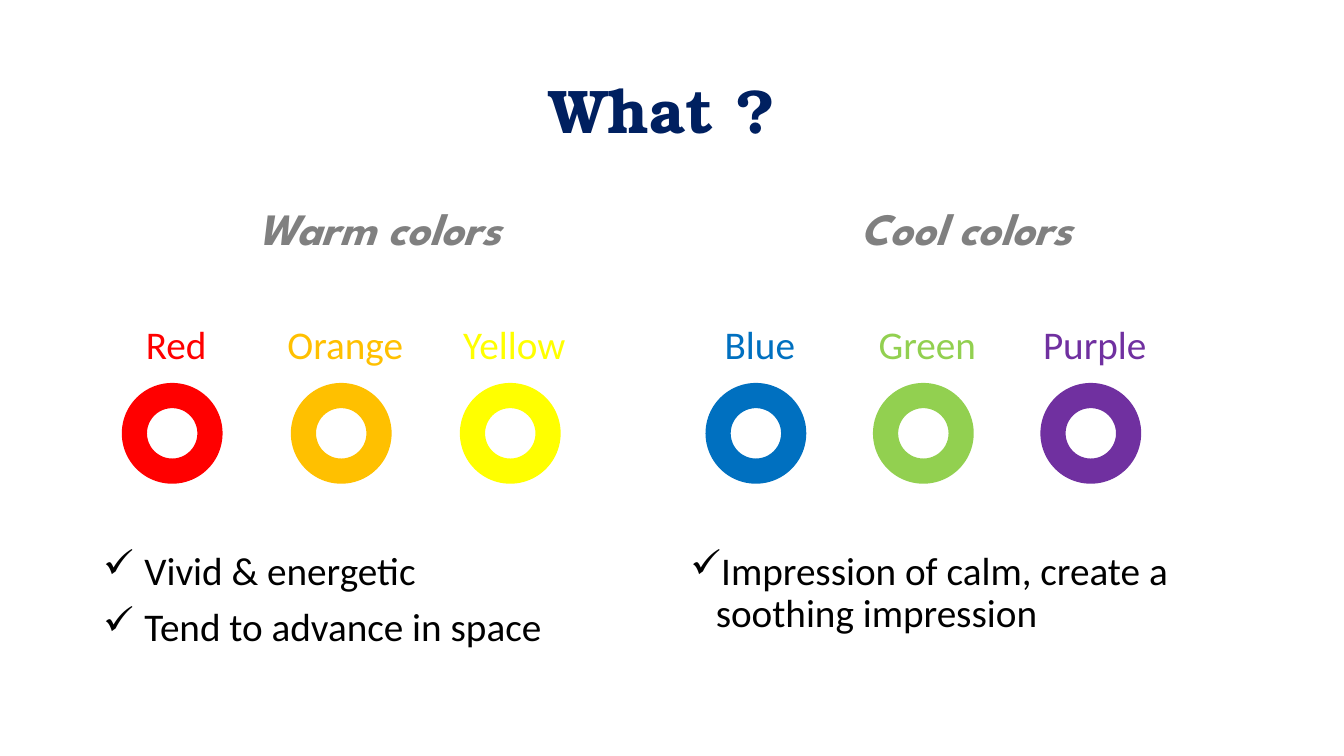
from pptx import Presentation
from pptx.dml.color import RGBColor
from pptx.enum import shapes, text
from pptx.oxml import parse_xml
from pptx.oxml.ns import nsdecls
from pptx.util import Cm, Pt

# Content
TITLE = "What ?"
GROUPS = [
    dict(head="Warm colors", left=2.6, first=4.34, step=4.26, hang=1.04,
         rings=["Red", "Orange", "Yellow"],
         points=["Vivid & energetic", "Tend to advance in space"]),
    dict(head="Cool colors", left=17.4, first=19.05, step=4.22, hang=0.64,
         rings=["Blue", "Green", "Purple"],
         points=["Impression of calm, create a soothing impression"]),
]
COLORS = {
    "Title": "002060", "Head": "808080", "Text": "000000",
    "Red": "FF0000", "Orange": "FFC000", "Yellow": "FFFF00",
    "Blue": "0070C0", "Green": "92D050", "Purple": "7030A0",
}

# Layout in centimetres
WIDTH, RING, LABEL = 13.9, 2.54, 4.2
HEAD_TOP, LABEL_TOP, RING_TOP, POINT_TOP = 5.21, 8.2, 9.65, 13.9

deck = Presentation()
deck.slide_width, deck.slide_height = Cm(33.87), Cm(19.05)
slide = deck.slides.add_slide(deck.slide_layouts[6])


def color(name):
    return RGBColor.from_string(COLORS[name])


def write(lines, left, top, width, height, tint, size=28, face="Calibri",
          bold=False, italic=False, hang=None):
    """Add a text box; a hang in cm gives check-mark bullets."""
    box = slide.shapes.add_textbox(Cm(left), Cm(top), Cm(width), Cm(height))
    frame = box.text_frame
    frame.word_wrap = True
    frame.margin_left = frame.margin_right = 0
    frame.margin_top = frame.margin_bottom = 0
    frame.text = "\n".join(lines)
    for i, para in enumerate(frame.paragraphs):
        para.line_spacing = 0.9
        para.space_before = Pt(10 if i else 0)
        para.alignment = text.PP_ALIGN.LEFT if hang else text.PP_ALIGN.CENTER
        if hang:
            props = para._p.get_or_add_pPr()
            props.set("marL", str(Cm(hang)))
            props.set("indent", str(-Cm(hang)))
            props.append(parse_xml(f'<a:buChar {nsdecls("a")} char="✓"/>'))
        for run in para.runs:
            font = run.font
            font.name, font.size = face, Pt(size)
            font.bold, font.italic = bold, italic
            font.color.rgb = color(tint)
    return frame


# Title
title = write([TITLE], 2.1, 1.02, 29.2, 3.68, "Title", 44,
              "TeX Gyre Bonum", bold=True)
title.vertical_anchor = text.MSO_ANCHOR.MIDDLE

for group in GROUPS:
    left = group["left"]
    # Heading
    write([group["head"]], left, HEAD_TOP, WIDTH, 1.3, "Head", 32,
          "League Spartan", bold=True, italic=True)
    # Labelled rings
    for i, name in enumerate(group["rings"]):
        mid = group["first"] + i * group["step"]
        write([name], mid + 0.1 - LABEL / 2, LABEL_TOP, LABEL, 1.2, name)
        ring = slide.shapes.add_shape(
            shapes.MSO_SHAPE.DONUT, Cm(mid - RING / 2), Cm(RING_TOP),
            Cm(RING), Cm(RING))
        ring.shadow.inherit = False
        ring.fill.solid()
        ring.fill.fore_color.rgb = color(name)
        ring.line.fill.background()
    # Points
    write(group["points"], left, POINT_TOP, WIDTH, 3, "Text",
          hang=group["hang"])

deck.save("out.pptx")
